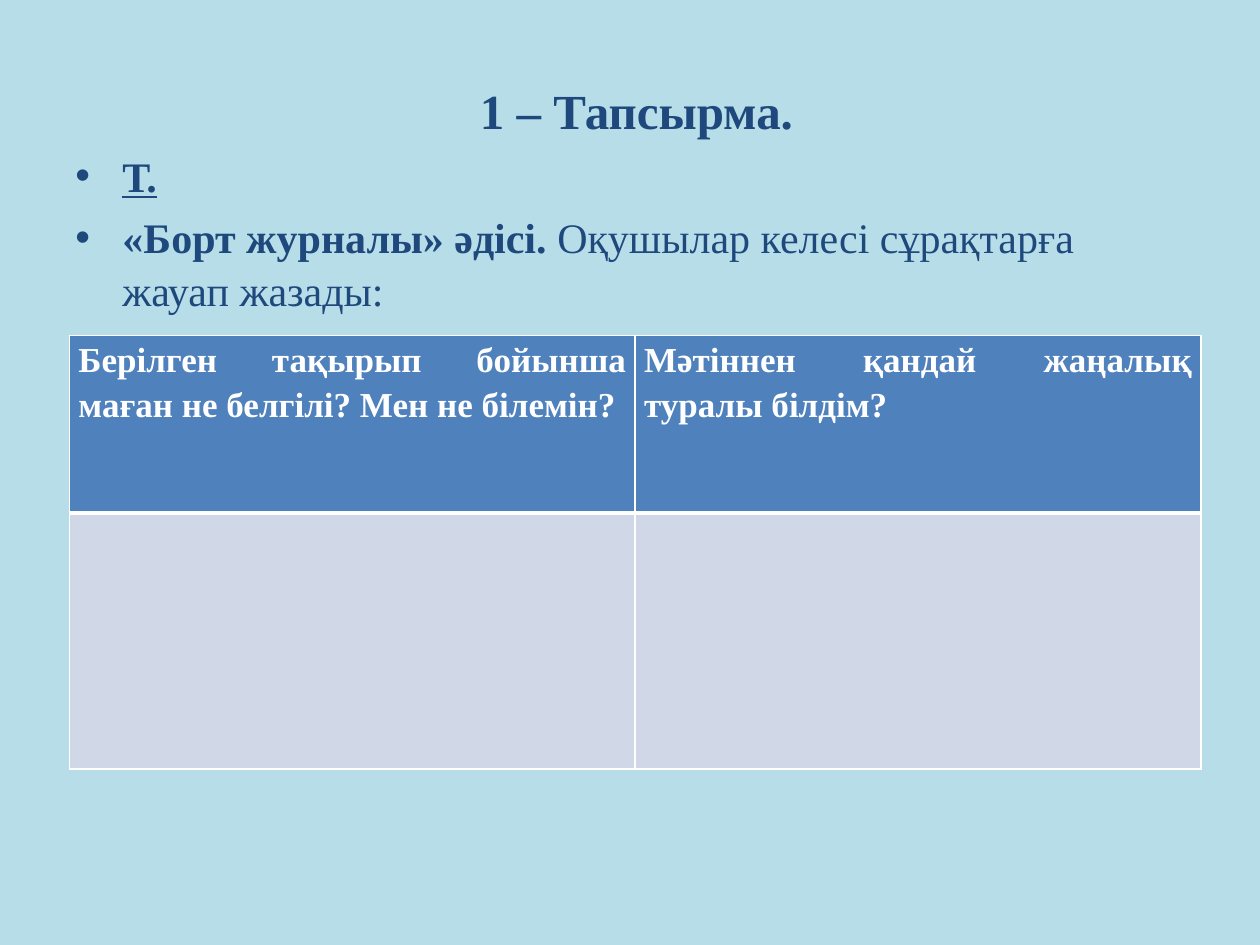
from lxml.etree import SubElement as Sub
from pptx import Presentation
from pptx.dml.color import RGBColor
from pptx.enum.text import MSO_ANCHOR as Anchor, PP_ALIGN as Align
from pptx.oxml.ns import qn
from pptx.util import Cm, Pt

NAVY, WHITE, BLUE, PALE, SKY = "1F497D", "FFFFFF", "4F81BD", "D0D8E8", "B7DEE8"
HEADS = [
    "Берілген тақырып бойынша маған не белгілі? Мен не білемін?",
    "Мәтіннен қандай жаңалық туралы білдім?",
]


def paint(fill, hue):
    """Make a fill solid in a hex colour."""
    fill.solid()
    fill.fore_color.rgb = RGBColor.from_string(hue)


def style(font, size, hue, bold=None):
    """Set the face, size, colour and weight of a font."""
    font.name, font.size, font.bold = "Times New Roman", Pt(size), bold
    paint(font.fill, hue)


def bullet(para):
    """Give a paragraph a round bullet and a hanging indent."""
    props = para._p.get_or_add_pPr()
    props.set("marL", str(Cm(0.95)))
    props.set("indent", str(Cm(-0.95)))
    Sub(props, qn("a:buFont"), typeface="Arial")
    Sub(props, qn("a:buChar"), char="•")


def edge(cell, side, width):
    """Draw a white border on one side of a cell."""
    line = Sub(cell._tc.get_or_add_tcPr(), qn("a:ln" + side), w=str(Pt(width)))
    Sub(Sub(line, qn("a:solidFill")), qn("a:srgbClr"), val=WHITE)


def add_title(slide, text):
    """Place the heading in the title placeholder."""
    title = slide.shapes.title
    title.left, title.top, title.width, title.height = Cm(1.4), Cm(0.79), Cm(22.86), Cm(3.96)
    frame = title.text_frame
    frame.text = text
    frame.vertical_anchor = Anchor.MIDDLE
    frame.margin_bottom = Cm(1.22)
    para = frame.paragraphs[0]
    para.alignment = Align.CENTER
    style(para.font, 28, NAVY, True)


def add_body(slide):
    """Add the bulleted task text."""
    frame = slide.shapes.add_textbox(Cm(1.27), Cm(2.77), Cm(22.86), Cm(4.57)).text_frame
    frame.word_wrap = True
    frame.margin_top = Cm(0.2)
    first, second = frame.paragraphs[0], frame.add_paragraph()
    second.space_before = Pt(4.5)
    for para in (first, second):
        bullet(para)
        para.line_spacing = 1.06
        style(para.font, 24, NAVY)
    for para, text, bold, under in (
        (first, "Т.", True, True),
        (second, "«Борт журналы» әдісі. ", True, False),
        (second, "Оқушылар келесі сұрақтарға жауап жазады:", False, False),
    ):
        run = para.add_run()
        run.text = text
        run.font.bold, run.font.underline = bold, under


def add_grid(slide):
    """Add the two-column table with room for answers."""
    grid = slide.shapes.add_table(2, 2, Cm(1.4), Cm(6.76), Cm(22.81), Cm(8.74)).table
    grid.rows[0].height, grid.rows[1].height = Cm(3.58), Cm(5.16)
    for col, text in enumerate(HEADS):
        head, blank = grid.cell(0, col), grid.cell(1, col)
        for cell, widths, hue in ((head, (1, 1, 1, 3), BLUE), (blank, (1, 1, 3, 1), PALE)):
            for side, width in zip("LRTB", widths):
                edge(cell, side, width)
            paint(cell.fill, hue)
        head.margin_left = head.margin_right = Cm(0.18)
        head.margin_top = head.margin_bottom = 0
        head.text = text
        para = head.text_frame.paragraphs[0]
        para.alignment, para.line_spacing = Align.JUSTIFY, 1.15
        style(para.font, 20, WHITE, True)


def main():
    """Build and save the slide."""
    deck = Presentation()
    deck.slide_width, deck.slide_height = Cm(25.4), Cm(19.05)
    slide = deck.slides.add_slide(deck.slide_layouts[5])
    paint(slide.background.fill, SKY)
    add_title(slide, "1 – Тапсырма.")
    add_body(slide)
    add_grid(slide)
    deck.save("out.pptx")


if __name__ == "__main__":
    main()
